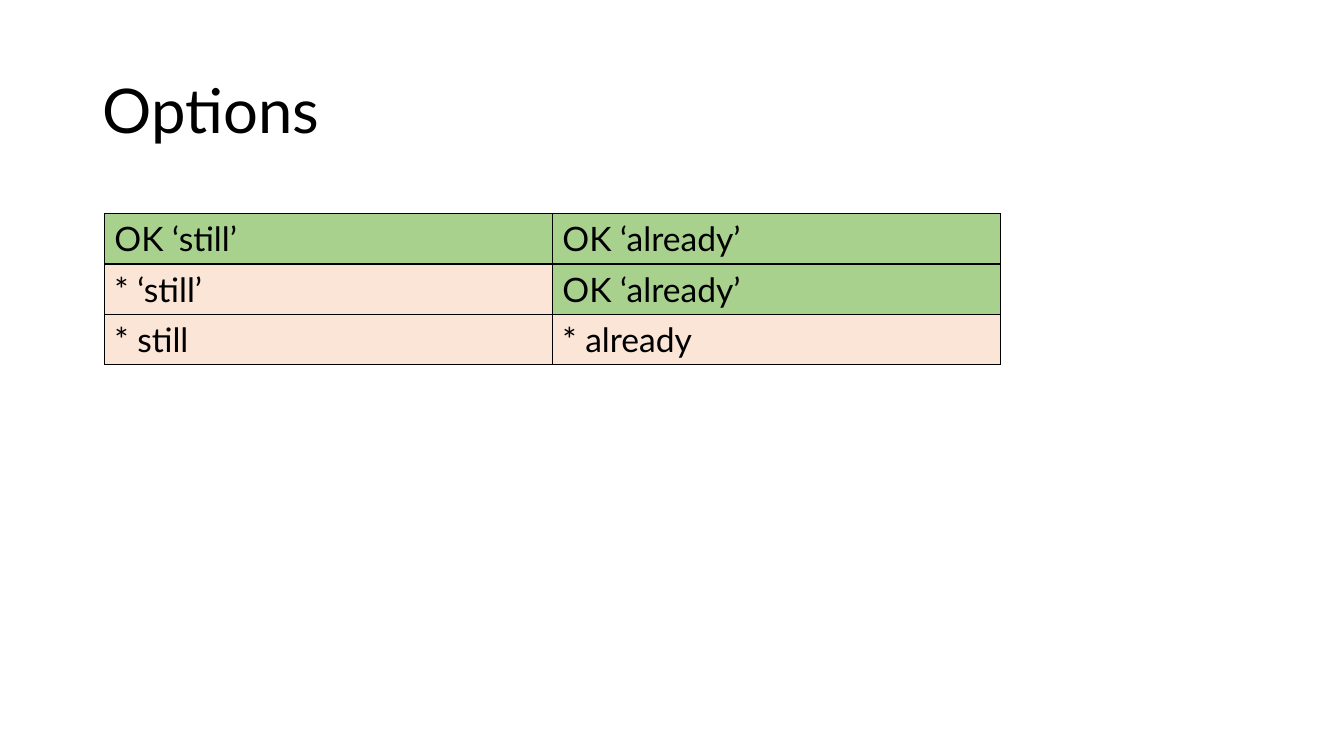
from dataclasses import dataclass

from lxml import etree
from pptx import Presentation
from pptx.dml.color import RGBColor
from pptx.enum.text import MSO_ANCHOR
from pptx.oxml.ns import qn
from pptx.util import Cm, Pt

MIDDLE = MSO_ANCHOR.MIDDLE

# Content: each cell is (text, verdict)
TITLE = "Options"
OPTIONS = [
    [("OK ‘still’", "good"), ("OK ‘already’", "good")],
    [("* ‘still’", "bad"), ("OK ‘already’", "good")],
    [("* still", "bad"), ("* already", "bad")],
]


@dataclass(frozen=True)
class Theme:
    font: str = "Lato"
    ink: str = "000000"
    good: str = "A9D18E"
    bad: str = "FBE5D6"
    title_size: int = 44
    cell_size: int = 24
    border: int = 1


THEME = Theme()
COLUMN_WIDTH, ROW_HEIGHT = Cm(11.29), Cm(1.27)


def style_text(para, size):
    for span in para.runs:
        span.font.name = THEME.font
        span.font.size = Pt(size)
        span.font.color.rgb = RGBColor.from_string(THEME.ink)


def add_borders(cell):
    properties = cell._tc.get_or_add_tcPr()
    for position, side in enumerate(("lnL", "lnR", "lnT", "lnB")):
        line = etree.Element(qn(f"a:{side}"), w=str(Pt(THEME.border)))
        fill = etree.SubElement(line, qn("a:solidFill"))
        etree.SubElement(fill, qn("a:srgbClr"), val=THEME.ink)
        properties.insert(position, line)


def add_title(page):
    box = page.shapes.add_textbox(Cm(2.33), Cm(1.01), Cm(29.21), Cm(3.68))
    frame = box.text_frame
    frame.word_wrap = True
    frame.vertical_anchor = MIDDLE
    frame.text = TITLE
    para = frame.paragraphs[0]
    para.line_spacing = 0.9
    style_text(para, THEME.title_size)


def add_options(page):
    rows, columns = len(OPTIONS), len(OPTIONS[0])
    table = page.shapes.add_table(
        rows, columns, Cm(2.63), Cm(5.38),
        COLUMN_WIDTH * columns, ROW_HEIGHT * rows).table
    table.first_row = False
    table.horz_banding = False
    for row_index, options in enumerate(OPTIONS):
        for column_index, (text, verdict) in enumerate(options):
            cell = table.cell(row_index, column_index)
            cell.text_frame.text = text
            style_text(cell.text_frame.paragraphs[0], THEME.cell_size)
            cell.fill.solid()
            cell.fill.fore_color.rgb = RGBColor.from_string(getattr(THEME, verdict))
            add_borders(cell)


def main():
    deck = Presentation()
    deck.slide_width, deck.slide_height = Cm(33.87), Cm(19.05)
    page = deck.slides.add_slide(deck.slide_layouts[6])
    add_title(page)
    add_options(page)
    deck.save("out.pptx")


if __name__ == "__main__":
    main()
